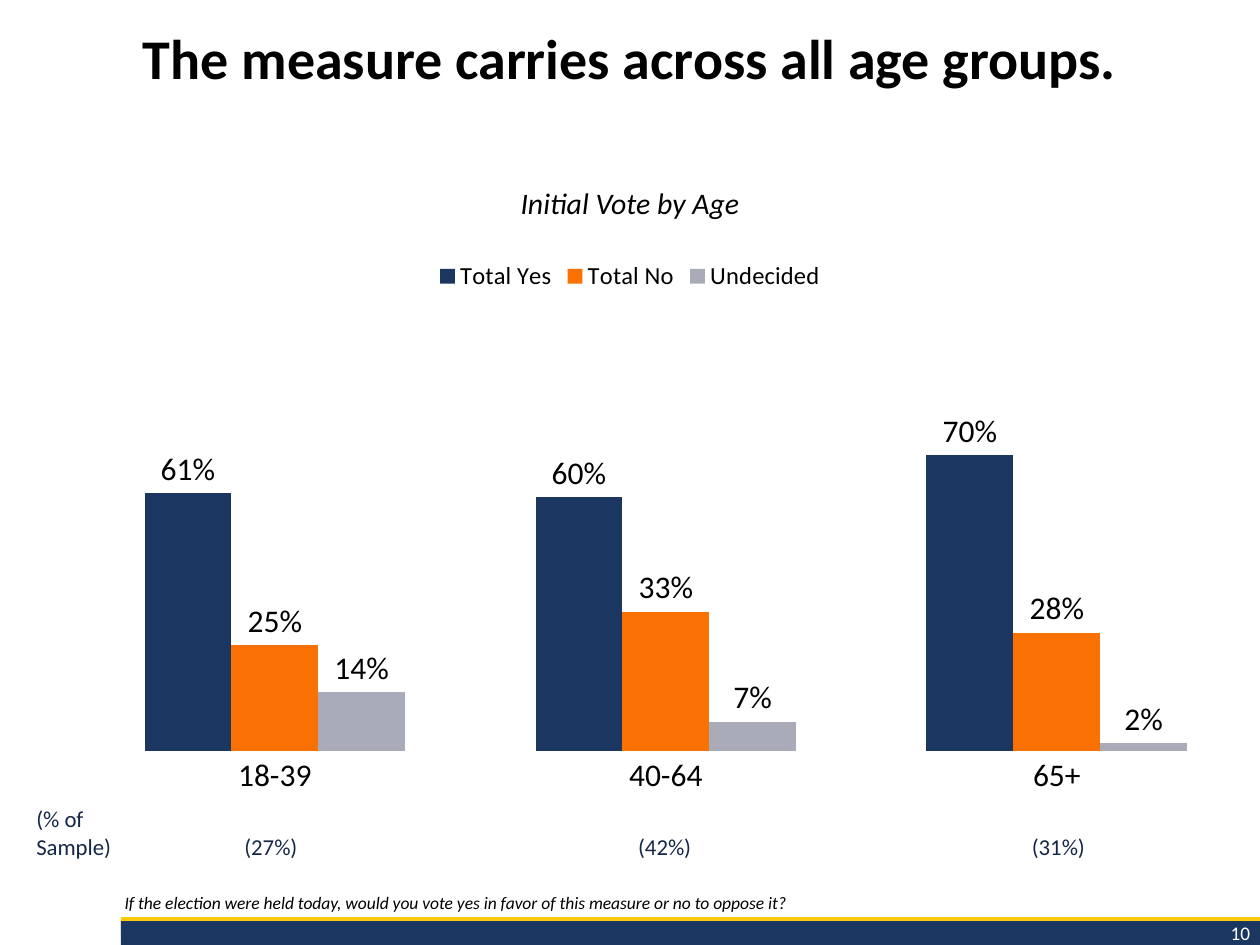
from lxml.etree import SubElement
from pptx import Presentation
from pptx.chart.data import CategoryChartData
from pptx.dml.color import RGBColor
from pptx.enum.chart import XL_CHART_TYPE, XL_LABEL_POSITION, XL_LEGEND_POSITION, XL_TICK_MARK
from pptx.enum.shapes import MSO_SHAPE
from pptx.enum.text import MSO_ANCHOR, PP_ALIGN
from pptx.oxml.ns import qn
from pptx.util import Inches, Pt

WIDTH, HEIGHT = Inches(10), Inches(7.5)
COLS, ROWS = 100, 75
FONT = "Calibri"
BLACK = RGBColor(0x00, 0x00, 0x00)
WHITE = RGBColor(0xFF, 0xFF, 0xFF)
GOLD = RGBColor(0xFC, 0xCA, 0x09)
BLUE = RGBColor(0x1B, 0x36, 0x61)
INK = RGBColor(0x14, 0x28, 0x48)
DARK = RGBColor(0x10, 0x20, 0x3A)
GROUPS = {"18-39": "(27%)", "40-64": "(42%)", "65+": "(31%)"}
VOTES = [
    ("Total Yes", (0.61, 0.60, 0.70), RGBColor(0x1B, 0x36, 0x60)),
    ("Total No", (0.25, 0.33, 0.28), RGBColor(0xF9, 0x71, 0x03)),
    ("Undecided", (0.14, 0.07, 0.02), RGBColor(0xA9, 0xAB, 0xB8)),
]
PLOT = {"x": 0.063, "y": 0.143, "w": 0.931, "h": 0.747}


def place(col, row, wide, high):
    """Turn grid columns and rows into slide lengths."""
    return (int(WIDTH * col / COLS), int(HEIGHT * row / ROWS),
            int(WIDTH * wide / COLS), int(HEIGHT * high / ROWS))


def style(font, size, color=BLACK, bold=False, italic=False):
    """Set the face, size and colour of a font."""
    font.name, font.size = FONT, Pt(size)
    font.bold, font.italic = bold, italic
    font.color.rgb = color


def add_text(slide, text, spot, size, align=PP_ALIGN.LEFT, anchor=MSO_ANCHOR.TOP,
             space=1.0, **look):
    """Add a wrapped text box with one paragraph."""
    frame = slide.shapes.add_textbox(*place(*spot)).text_frame
    frame.word_wrap = True
    frame.vertical_anchor = anchor
    para = frame.paragraphs[0]
    para.alignment, para.line_spacing = align, space
    run = para.add_run()
    run.text = text
    style(run.font, size, **look)


def add_bar(slide, spot, color):
    """Add a plain filled bar."""
    bar = slide.shapes.add_shape(MSO_SHAPE.RECTANGLE, *place(*spot))
    bar.shadow.inherit = False
    bar.fill.solid()
    bar.fill.fore_color.rgb = color
    bar.line.fill.background()


def fix_plot(chart):
    """Pin the inner plot area to its share of the chart."""
    area = chart.plots[0]._element.getparent()
    for old in area.findall(qn("c:layout")):
        area.remove(old)
    layout = SubElement(area, qn("c:layout"))
    area.insert(0, layout)
    manual = SubElement(layout, qn("c:manualLayout"))
    pairs = [("layoutTarget", "inner"), ("xMode", "edge"), ("yMode", "edge")]
    for tag, value in pairs + list(PLOT.items()):
        SubElement(manual, qn(f"c:{tag}")).set("val", str(value))


def add_votes(slide, spot):
    """Add the column chart of votes by age."""
    data = CategoryChartData(number_format="0%")
    data.categories = list(GROUPS)
    for name, shares, _ in VOTES:
        data.add_series(name, shares)
    chart = slide.shapes.add_chart(
        XL_CHART_TYPE.COLUMN_CLUSTERED, *place(*spot), data).chart
    style(chart.font, 10, DARK)
    chart.has_title = False
    chart.has_legend = True
    chart.legend.position = XL_LEGEND_POSITION.TOP
    chart.legend.include_in_layout = False
    style(chart.legend.font, 14)
    ages, scale = chart.category_axis, chart.value_axis
    ages.major_tick_mark = ages.minor_tick_mark = XL_TICK_MARK.NONE
    ages.format.line.fill.background()
    style(ages.tick_labels.font, 18)
    scale.minimum_scale, scale.maximum_scale, scale.major_unit = 0, 1, 0.2
    scale.has_major_gridlines = False
    scale.visible = False
    plot = chart.plots[0]
    plot.gap_width, plot.overlap = 150, 0
    plot.vary_by_categories = False
    for series, (_, _, color) in zip(plot.series, VOTES):
        series.format.fill.solid()
        series.format.fill.fore_color.rgb = color
        labels = series.data_labels
        labels.show_value = True
        labels.number_format, labels.number_format_is_linked = "0%", False
        labels.position = XL_LABEL_POSITION.OUTSIDE_END
        style(labels.font, 18)
    fix_plot(chart)


def main():
    """Build the slide and save it."""
    deck = Presentation()
    deck.slide_width, deck.slide_height = WIDTH, HEIGHT
    slide = deck.slides.add_slide(deck.slide_layouts[6])
    add_bar(slide, (9.6, 72.8, 90.4, 1.6), GOLD)
    add_bar(slide, (9.6, 73.1, 90.4, 1.9), BLUE)
    add_text(slide, "10", (85.4, 72.6, 14.8, 2.9), 11, PP_ALIGN.RIGHT, color=WHITE)
    add_text(slide, "The measure carries across all age groups.",
             (0, 2, 100, 12.2), 32, PP_ALIGN.CENTER, space=0.9, bold=True)
    add_text(slide, "If the election were held today, would you vote yes in favor "
             "of this measure or no to oppose it?", (8.9, 67.6, 90.9, 5.4), 10,
             anchor=MSO_ANCHOR.BOTTOM, space=0.9, italic=True)
    add_votes(slide, (0, 19.6, 100, 45))
    add_text(slide, "(% of Sample)", (1.9, 63.4, 10.4, 5.4), 13, color=INK)
    for i, share in enumerate(GROUPS.values()):
        add_text(slide, share, (16.3 + 31.25 * i, 65.6, 10.4, 3.2), 13,
                 PP_ALIGN.CENTER, color=INK)
    add_text(slide, "Initial Vote by Age", (0, 14.2, 100, 3.9), 17,
             PP_ALIGN.CENTER, italic=True)
    deck.save("out.pptx")


if __name__ == "__main__":
    main()
